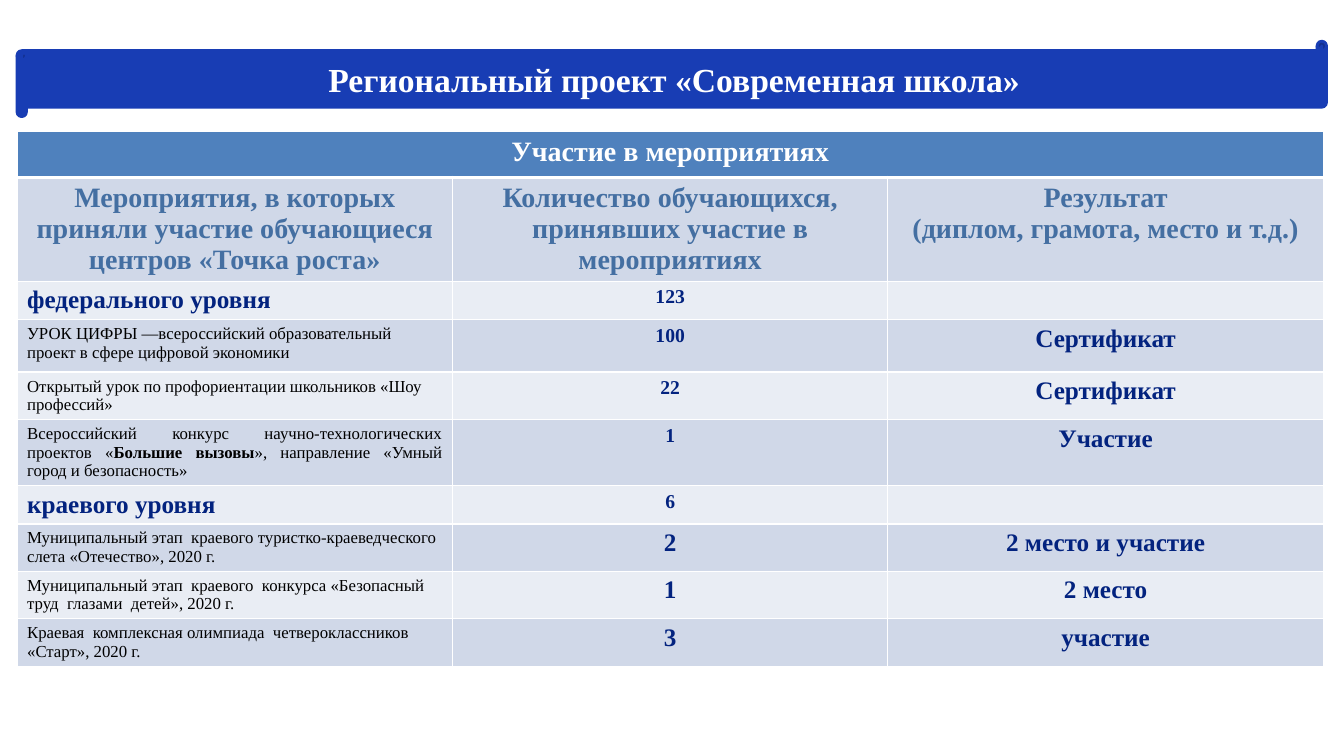
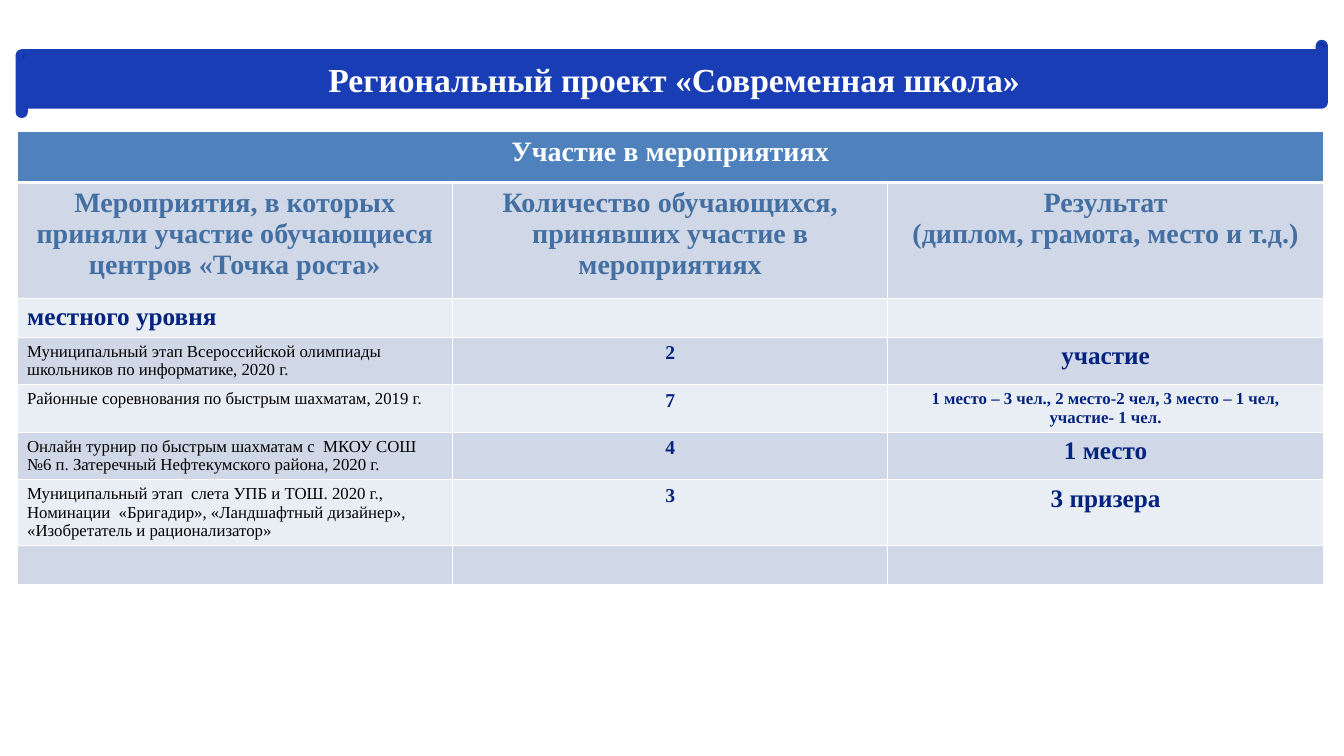
from dataclasses import dataclass

import pptx
import pptx.dml.color
import pptx.enum.shapes
import pptx.enum.text
import pptx.oxml
import pptx.oxml.ns
import pptx.util
from lxml import etree

Cm = pptx.util.Cm
Pt = pptx.util.Pt
RGB = pptx.dml.color.RGBColor.from_string
ALIGN = pptx.enum.text.PP_ALIGN
ANCHOR = pptx.enum.text.MSO_ANCHOR
SHAPE = pptx.enum.shapes.MSO_SHAPE


@dataclass(frozen=True)
class Theme:
    font: str = "Times New Roman"
    banner: str = "183DB4"
    header: str = "4F81BD"
    bands: tuple = ("D0D8E8", "E9EDF4")
    white: str = "FFFFFF"
    heading: str = "446FA2"
    navy: str = "03237F"
    black: str = "000000"
    title_size: int = 24
    heading_size: int = 20
    large: int = 18
    medium: int = 14
    small: int = 12
    rule: int = 1
    thick_rule: int = 3


THEME = Theme()


@dataclass(frozen=True)
class Row:
    height: float
    event: str = ""
    count: str = ""
    result: str = ""
    level: bool = False
    count_size: int = THEME.medium
    result_size: int = THEME.large
    align: ALIGN = ALIGN.LEFT


TITLE = "Региональный проект «Современная школа»"
TABLE_TITLE = "Участие в мероприятиях"
HEADINGS = (
    "Мероприятия, в которых приняли участие обучающиеся центров «Точка роста»",
    "Количество обучающихся, принявших участие в мероприятиях",
    "Результат\n(диплом, грамота, место и т.д.)",
)

FEDERAL_AND_REGIONAL = (
    Row(0.91, "федерального уровня", "123", level=True),
    Row(1.32, "УРОК ЦИФРЫ —всероссийский образовательный проект в сфере цифровой экономики",
        "100", "Сертификат"),
    Row(1.14, "Открытый урок по профориентации школьников «Шоу профессий»",
        "22", "Сертификат"),
    Row(1.6, "Всероссийский конкурс научно-технологических проектов "
        "«*Большие вызовы*», направление «Умный город и безопасность»",
        "1", "Участие", align=ALIGN.JUSTIFY),
    Row(0.91, "краевого уровня", "6", level=True),
    Row(1.14, "Муниципальный этап  краевого туристко-краеведческого слета «Отечество», 2020 г.",
        "2", "2 место и участие", count_size=THEME.large),
    Row(1.14, "Муниципальный этап  краевого  конкурса «Безопасный труд  глазами  детей», 2020 г.",
        "1", "2 место", count_size=THEME.large),
    Row(1.14, "Краевая  комплексная олимпиада  четвероклассников «Старт», 2020 г.",
        "3", "участие", count_size=THEME.large),
)

LOCAL = (
    Row(0.98, "местного уровня", level=True),
    Row(0.97, "Муниципальный этап Всероссийской олимпиады школьников по информатике, 2020 г.",
        "2", "участие"),
    Row(0.97, "Районные соревнования по быстрым шахматам, 2019 г.",
        "7", "1 место – 3 чел., 2 место-2 чел, 3 место – 1 чел, участие- 1 чел.",
        result_size=THEME.small),
    Row(0.97, "Онлайн турнир по быстрым шахматам с  МКОУ СОШ №6 п. Затеречный "
        "Нефтекумского района, 2020 г.", "4", "1 место"),
    Row(0.97, "Муниципальный этап  слета УПБ и ТОШ. 2020 г.,\n"
        "Номинации  «Бригадир», «Ландшафтный дизайнер»,  «Изобретатель и рационализатор»",
        "3", "3 призера"),
    Row(0.97),
)


def write(tf, text, size=THEME.large, color=THEME.navy, bold=True, align=ALIGN.CENTER):
    for i, line in enumerate(text.split("\n")):
        p = tf.paragraphs[0] if i == 0 else tf.add_paragraph()
        p.alignment = align
        for j, part in enumerate(line.split("*")):
            r = p.add_run()
            r.text = part
            r.font.name = THEME.font
            r.font.size = Pt(size)
            r.font.bold = bold or j % 2 == 1
            r.font.color.rgb = RGB(color)


def style_cell(cell, fill, top=THEME.rule, bottom=THEME.rule):
    tc_pr = cell._tc.get_or_add_tcPr()
    widths = {"L": THEME.rule, "R": THEME.rule, "T": top, "B": bottom}
    for side, width in widths.items():
        ln = etree.SubElement(tc_pr, pptx.oxml.ns.qn(f"a:ln{side}"), w=str(Pt(width)))
        solid = etree.SubElement(ln, pptx.oxml.ns.qn("a:solidFill"))
        etree.SubElement(solid, pptx.oxml.ns.qn("a:srgbClr"), val=THEME.white)
    cell.fill.solid()
    cell.fill.fore_color.rgb = RGB(fill)


def add_banner(slide, left, top, width, height):
    sp = slide.shapes.add_shape(SHAPE.HORIZONTAL_SCROLL, Cm(left), Cm(top), Cm(width), Cm(height))
    sp.shadow.inherit = False
    sp.fill.solid()
    sp.fill.fore_color.rgb = RGB(THEME.banner)
    sp.line.color.rgb = RGB(THEME.banner)
    sp.line.width = Pt(2)
    tf = sp.text_frame
    tf.word_wrap = True
    tf.vertical_anchor = ANCHOR.MIDDLE
    write(tf, TITLE, THEME.title_size, THEME.white)


def fill_event_row(cells, row):
    if row.level:
        write(cells[0].text_frame, row.event, align=ALIGN.LEFT)
    else:
        write(cells[0].text_frame, row.event, THEME.small, THEME.black, False, row.align)
    write(cells[1].text_frame, row.count, row.count_size)
    write(cells[2].text_frame, row.result, row.result_size)


def add_events_table(slide, left, top, width, head_heights, rows):
    heights = [*head_heights, *(row.height for row in rows)]
    columns = len(HEADINGS)
    frame = slide.shapes.add_table(
        len(heights), columns, Cm(left), Cm(top), Cm(width), Cm(sum(heights)))
    table = frame.table
    table.first_row = False
    table.horz_banding = False
    for column in table.columns:
        column.width = Cm(width / columns)
    for i, height in enumerate(heights):
        table.rows[i].height = Cm(height)
        for cell in table.rows[i].cells:
            style_cell(
                cell,
                THEME.header if i == 0 else THEME.bands[(i - 1) % 2],
                top=THEME.thick_rule if i == 1 else THEME.rule,
                bottom=THEME.thick_rule if i == 0 else THEME.rule)

    table.cell(0, 0).merge(table.cell(0, columns - 1))
    write(table.cell(0, 0).text_frame, TABLE_TITLE, THEME.heading_size, THEME.white)
    for cell, heading in zip(table.rows[1].cells, HEADINGS):
        write(cell.text_frame, heading, THEME.heading_size, THEME.heading)
    for i, row in enumerate(rows, start=2):
        fill_event_row(list(table.rows[i].cells), row)


def add_events_slide(prs, head_heights, rows):
    slide = prs.slides.add_slide(prs.slide_layouts[6])
    add_banner(slide, 0.43, 1.04, 33, 1.9)
    add_events_table(slide, 0.43, 3.3, 32.92, head_heights, rows)


def main():
    prs = pptx.Presentation()
    prs.slide_width = Cm(33.87)
    prs.slide_height = Cm(19.05)
    add_events_slide(prs, (1.17, 2.62), FEDERAL_AND_REGIONAL)
    add_events_slide(prs, (1.3, 2.92), LOCAL)
    prs.save("out.pptx")


if __name__ == "__main__":
    main()
